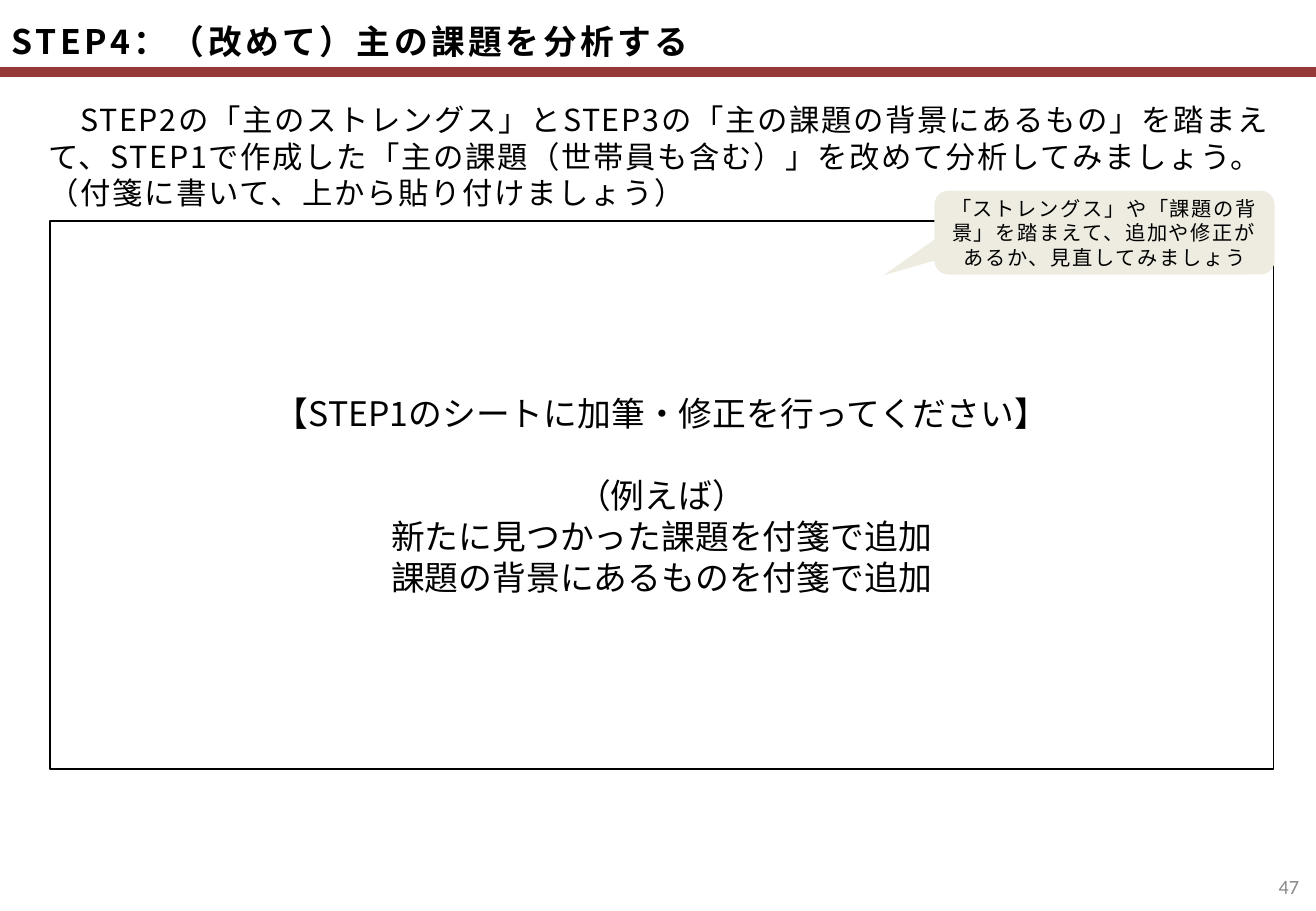
from lxml import etree
from pptx import Presentation
from pptx.dml.color import RGBColor
from pptx.enum.shapes import MSO_CONNECTOR, MSO_SHAPE
from pptx.enum.text import MSO_ANCHOR, MSO_AUTO_SIZE, PP_ALIGN
from pptx.oxml.ns import qn
from pptx.util import Inches, Pt

TITLE = "STEP4：（改めて）主の課題を分析する"
INTRO = (
    "　STEP2の「主のストレングス」とSTEP3の「主の課題の背景にあるもの」を踏まえて、"
    "STEP1で作成した「主の課題（世帯員も含む）」を改めて分析してみましょう。"
    "（付箋に書いて、上から貼り付けましょう）"
)
SHEET = [
    "【STEP1のシートに加筆・修正を行ってください】",
    "（例えば）\v新たに見つかった課題を付箋で追加",
    "課題の背景にあるものを付箋で追加",
]
HINT = "「ストレングス」や「課題の背景」を踏まえて、追加や修正があるか、見直してみましょう"
PAGE_NUMBER = "47"

JAPANESE = "Noto Sans CJK JP"
BLACK, WHITE, RED, BEIGE, GREY = "000000", "FFFFFF", "953735", "EEECE1", "898989"
LINE_HEIGHT = 1.21
SLIDE_WIDTH, SLIDE_HEIGHT = 10.83, 7.5
HEADER_HEIGHT = 0.59


def rgb(hex_colour):
    return RGBColor.from_string(hex_colour)


def write(shape, paragraphs, size, align=PP_ALIGN.LEFT, anchor=MSO_ANCHOR.MIDDLE,
          colour=BLACK, typeface=JAPANESE, bold=False, spacing=0):
    """Fill a shape with paragraphs; spacing is the letter spacing in points."""
    frame = shape.text_frame
    frame.word_wrap = True
    frame.vertical_anchor = anchor
    for index, wording in enumerate(paragraphs):
        paragraph = frame.add_paragraph() if index else frame.paragraphs[0]
        paragraph.text = wording
        paragraph.alignment = align
        paragraph.line_spacing = Pt(size * LINE_HEIGHT)
        font = paragraph.font
        font.size, font.bold, font.name = Pt(size), bold, typeface
        font.color.rgb = rgb(colour)
        defaults = paragraph._p.pPr.find(qn("a:defRPr"))
        defaults.set("spc", str(spacing * 100))
        etree.SubElement(defaults, qn("a:ea")).set("typeface", typeface)
    return frame


def add_box(shapes, preset, box, fill):
    shape = shapes.add_shape(preset, *map(Inches, box))
    shape.shadow.inherit = False
    shape.fill.solid()
    shape.fill.fore_color.rgb = rgb(fill)
    return shape


def add_text(shapes, box):
    return shapes.add_textbox(*map(Inches, box))


def main():
    deck = Presentation()
    deck.slide_width, deck.slide_height = Inches(SLIDE_WIDTH), Inches(SLIDE_HEIGHT)
    shapes = deck.slides.add_slide(deck.slide_layouts[6]).shapes

    rule = shapes.add_connector(MSO_CONNECTOR.STRAIGHT, 0, Inches(HEADER_HEIGHT),
                                Inches(SLIDE_WIDTH), Inches(HEADER_HEIGHT))
    rule.line.color.rgb = rgb(RED)
    rule.line.width = Pt(6)
    etree.SubElement(rule._element.spPr, qn("a:effectLst"))

    page = add_text(shapes, (10.37, 7.1, 0.42, 0.4))
    write(page, [PAGE_NUMBER], 12, PP_ALIGN.RIGHT, colour=GREY, typeface="Calibri")

    sheet = add_box(shapes, MSO_SHAPE.RECTANGLE, (0.41, 1.82, 10.07, 4.51), WHITE)
    sheet.line.color.rgb = rgb(BLACK)
    sheet.line.width = Pt(1)
    examples = write(sheet, SHEET, 20, PP_ALIGN.CENTER).paragraphs[1]
    examples.space_before = Pt(20 * LINE_HEIGHT)

    title = add_text(shapes, (0, 0, 10.54, HEADER_HEIGHT))
    heading = write(title, [TITLE], 20, bold=True, spacing=2)
    heading.margin_top, heading.margin_bottom = Inches(0.08), 0

    hint = add_box(shapes, MSO_SHAPE.ROUNDED_RECTANGULAR_CALLOUT,
                   (7.69, 1.57, 2.8, 0.69), BEIGE)
    hint.line.fill.background()
    hint.adjustments[0], hint.adjustments[1] = -0.65, 0.51
    write(hint, [HINT], 12, PP_ALIGN.CENTER, spacing=1)

    intro = add_text(shapes, (0.3, 0.78, 10.24, 1.28))
    lead = write(intro, [INTRO], 18, anchor=MSO_ANCHOR.TOP, spacing=1)
    lead.auto_size = MSO_AUTO_SIZE.SHAPE_TO_FIT_TEXT

    deck.save("out.pptx")


if __name__ == "__main__":
    main()
